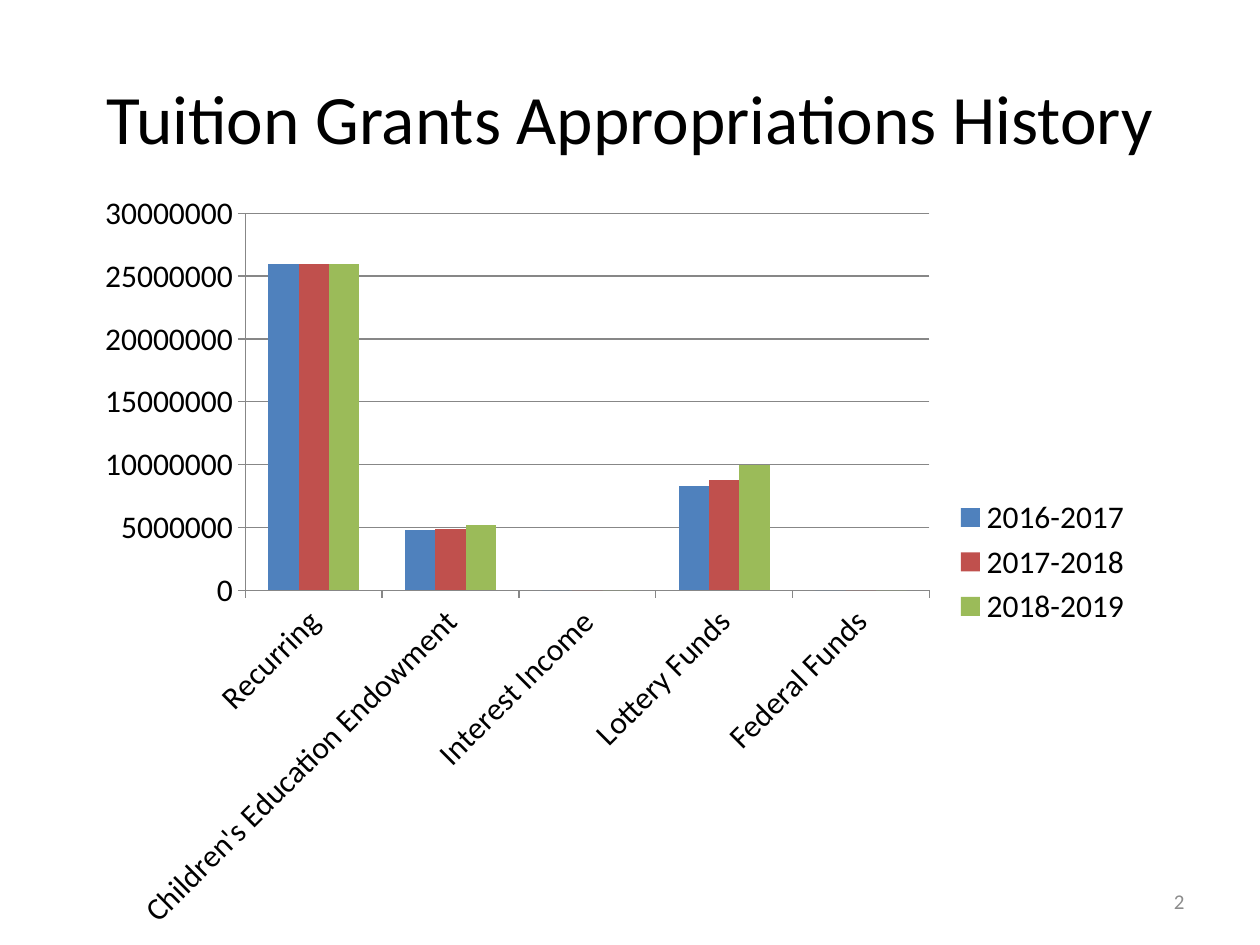
from pptx import Presentation
from pptx.chart.data import CategoryChartData
from pptx.dml.color import RGBColor
from pptx.enum.chart import XL_CHART_TYPE, XL_LEGEND_POSITION, XL_TICK_MARK
from pptx.enum.text import MSO_ANCHOR, PP_ALIGN
from pptx.util import Pt

PX = 914400 // 126
FONT = "Calibri"
BLACK = RGBColor(0x00, 0x00, 0x00)
GRAY = RGBColor(0x8C, 0x8C, 0x8C)
AXIS_GRAY = RGBColor(0x87, 0x87, 0x87)

SOURCES = ["Recurring", "Children's Education Endowment", "Interest Income",
           "Lottery Funds", "Federal Funds"]
APPROPRIATIONS = [
    ("2016-2017", (26000000, 4800000, 0, 8300000, 0), RGBColor(0x4F, 0x81, 0xBD)),
    ("2017-2018", (26000000, 4900000, 0, 8800000, 0), RGBColor(0xC0, 0x50, 0x4D)),
    ("2018-2019", (26000000, 5200000, 0, 10000000, 0), RGBColor(0x9B, 0xBB, 0x59)),
]


def to_emu(box):
    return [length * PX for length in box]


def style_font(font, size, color):
    font.name = FONT
    font.size = Pt(size)
    font.color.rgb = color


def style_line(line):
    line.color.rgb = AXIS_GRAY
    line.width = Pt(0.75)


def set_text(shape, text, size, color, alignment):
    frame = shape.text_frame
    frame.word_wrap = True
    frame.vertical_anchor = MSO_ANCHOR.MIDDLE
    frame.text = text
    paragraph = frame.paragraphs[0]
    paragraph.alignment = alignment
    style_font(paragraph.font, size, color)


def add_title(slide, box):
    title = slide.shapes.title
    title.left, title.top, title.width, title.height = to_emu(box)
    set_text(title, "Tuition Grants Appropriations History", 39.6, BLACK, PP_ALIGN.CENTER)


def add_page_number(slide, box):
    number = slide.shapes.add_textbox(*to_emu(box))
    set_text(number, "2", 12, GRAY, PP_ALIGN.RIGHT)


def add_appropriations_chart(slide, box):
    data = CategoryChartData()
    data.categories = SOURCES
    for year, amounts, _ in APPROPRIATIONS:
        data.add_series(year, amounts)
    chart = slide.shapes.add_chart(
        XL_CHART_TYPE.COLUMN_CLUSTERED, *to_emu(box), data).chart
    style_font(chart.font, 18, BLACK)
    chart.has_title = False
    chart.has_legend = True
    chart.legend.position = XL_LEGEND_POSITION.RIGHT
    chart.legend.include_in_layout = False

    plot = chart.plots[0]
    plot.gap_width = 150
    plot.overlap = 0
    plot.vary_by_categories = False
    for series, (_, _, color) in zip(plot.series, APPROPRIATIONS):
        series.format.fill.solid()
        series.format.fill.fore_color.rgb = color

    for axis in (chart.category_axis, chart.value_axis):
        axis.major_tick_mark = XL_TICK_MARK.OUTSIDE
        style_line(axis.format.line)
    chart.value_axis.has_major_gridlines = True
    style_line(chart.value_axis.major_gridlines.format.line)


def main():
    presentation = Presentation()
    presentation.slide_width = 1260 * PX
    presentation.slide_height = 945 * PX
    slide = presentation.slides.add_slide(presentation.slide_layouts[5])
    add_title(slide, (63, 38, 1134, 158))
    add_page_number(slide, (903, 876, 294, 50))
    add_appropriations_chart(slide, (84, 179, 1061, 766))
    presentation.save("out.pptx")


if __name__ == "__main__":
    main()
